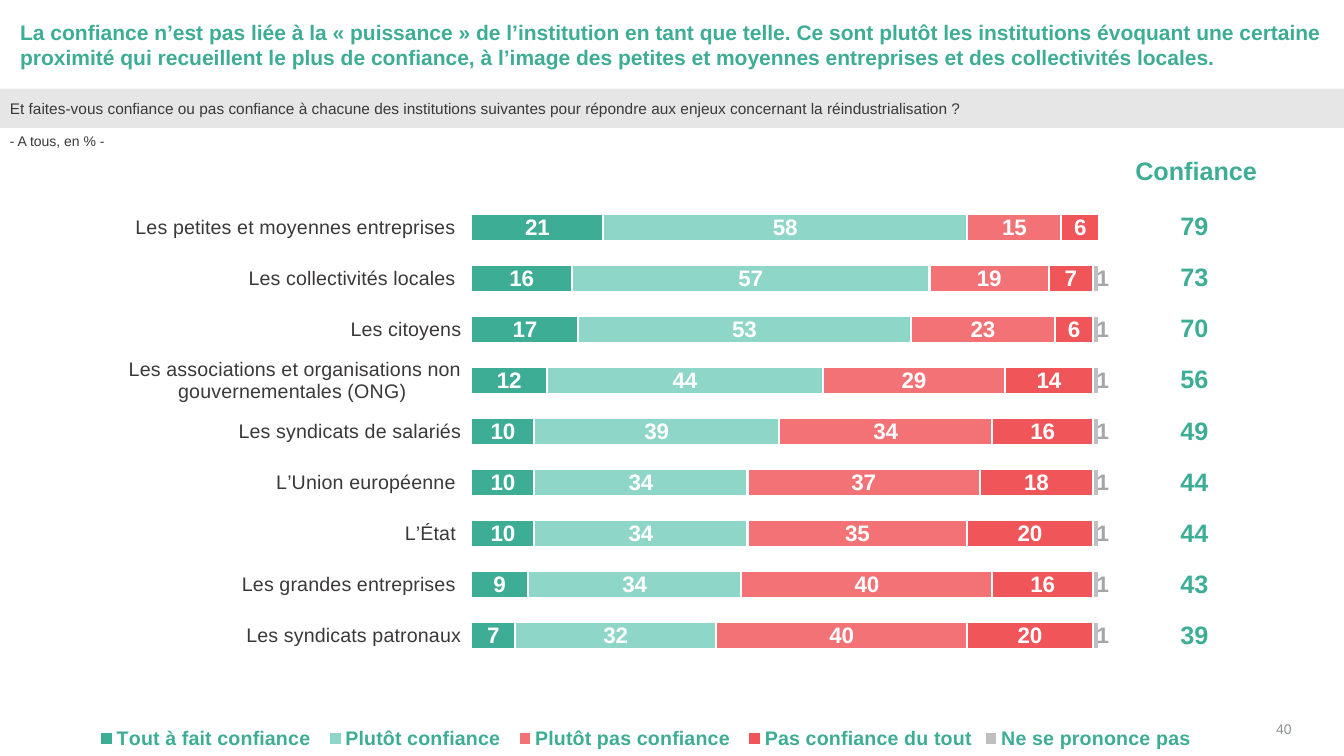
import dataclasses

import lxml.etree
import pptx
import pptx.chart.data
import pptx.dml.color
import pptx.enum.chart
import pptx.enum.shapes
import pptx.enum.text
import pptx.oxml
import pptx.oxml.ns
import pptx.util

PX = 9144
ALIGN = pptx.enum.text.PP_ALIGN
ANCHOR = pptx.enum.text.MSO_ANCHOR
qn = pptx.oxml.ns.qn


@dataclasses.dataclass(frozen=True)
class Theme:
    font: str = "Arial"
    green: str = "3EAD95"
    light_green: str = "8ED6C7"
    light_red: str = "F27275"
    red: str = "F05559"
    silver: str = "BFBFBF"
    grey_label: str = "A6A6A6"
    band: str = "E6E6E6"
    ink: str = "3B3838"
    page: str = "8C9491"
    white: str = "FFFFFF"
    small: int = 10
    question: int = 11
    axis: int = 14
    title: int = 15
    label: int = 16
    total: int = 18


T = Theme()

CATEGORIES = [
    "Les petites et moyennes entreprises ",
    "Les collectivités locales ",
    "Les citoyens",
    "Les associations et organisations non gouvernementales (ONG) ",
    "Les syndicats de salariés",
    "L’Union européenne ",
    "L’État ",
    "Les grandes entreprises ",
    "Les syndicats patronaux",
]
SERIES = [
    ("Tout à fait confiance ", T.green, [21, 16, 17, 12, 10, 10, 10, 9, 7]),
    ("Plutôt confiance ", T.light_green, [58, 57, 53, 44, 39, 34, 34, 34, 32]),
    ("Plutôt pas confiance ", T.light_red, [15, 19, 23, 29, 34, 37, 35, 40, 40]),
    ("Pas confiance du tout", T.red, [6, 7, 6, 14, 16, 18, 20, 16, 20]),
    ("Ne se prononce pas", T.silver, [None] + [1] * 8),
]
PLOT_LAYOUT = {"x": 0.365, "y": 0.061, "w": 0.486, "h": 0.781}


def px(*values):
    return [pptx.util.Emu(v * PX) for v in values]


def rgb(color):
    return pptx.dml.color.RGBColor.from_string(color)


def set_font(font, size, color, bold=False):
    font.name = T.font
    font.size = pptx.util.Pt(size)
    font.bold = bold
    font.color.rgb = rgb(color)


def write(tf, text, size=T.small, color=T.ink, bold=False, align=ALIGN.LEFT,
          anchor=ANCHOR.TOP, inset=(0, 0, 0, 0), wrap=True, indent=0):
    tf.word_wrap = wrap
    tf.vertical_anchor = anchor
    tf.margin_left, tf.margin_top, tf.margin_right, tf.margin_bottom = px(*inset)
    for i, line in enumerate(text.split("\n")):
        p = tf.paragraphs[0] if i == 0 else tf.add_paragraph()
        p.alignment = align
        if indent:
            p._p.get_or_add_pPr().set("marL", str(indent * PX))
        r = p.add_run()
        r.text = line
        set_font(r.font, size, color, bold)


def add_text(s, box, text, **fmt):
    write(s.shapes.add_textbox(*px(*box)).text_frame, text, **fmt)


def add_band(s, box, fill, text, opacity=100, **fmt):
    sp = s.shapes.add_shape(pptx.enum.shapes.MSO_SHAPE.RECTANGLE, *px(*box))
    sp.shadow.inherit = False
    sp.fill.solid()
    sp.fill.fore_color.rgb = rgb(fill)
    sp.line.fill.background()
    if opacity < 100:
        clr = sp._element.spPr.find(".//" + qn("a:srgbClr"))
        lxml.etree.SubElement(clr, qn("a:alpha"), val=str(opacity * 1000))
    write(sp.text_frame, text, anchor=ANCHOR.MIDDLE, **fmt)


def place_plot(chart):
    area = chart._chartSpace.chart.plotArea
    for old in area.findall(qn("c:layout")):
        area.remove(old)
    layout = lxml.etree.Element(qn("c:layout"))
    manual = lxml.etree.SubElement(layout, qn("c:manualLayout"))
    settings = {"layoutTarget": "inner", "xMode": "edge", "yMode": "edge", **PLOT_LAYOUT}
    for name, value in settings.items():
        lxml.etree.SubElement(manual, qn("c:" + name), val=str(value))
    area.insert(0, layout)


def style_series(ser, color):
    ser.format.fill.solid()
    ser.format.fill.fore_color.rgb = rgb(color)
    ser.format.line.color.rgb = rgb(T.white)
    ser.format.line.width = pptx.util.Pt(1.5)
    labels = ser.data_labels
    labels.show_value = True
    labels.number_format = "##0"
    labels.number_format_is_linked = False
    no_answer = color == T.silver
    set_font(labels.font, T.label, T.grey_label if no_answer else T.white, True)
    if no_answer:
        labels.position = pptx.enum.chart.XL_LABEL_POSITION.INSIDE_BASE


def add_trust_chart(s, box):
    data = pptx.chart.data.CategoryChartData(number_format="##0")
    data.categories = CATEGORIES
    for name, _, values in SERIES:
        data.add_series(name, values)
    kind = pptx.enum.chart.XL_CHART_TYPE.BAR_STACKED_100
    chart = s.shapes.add_chart(kind, *px(*box), data).chart
    chart.has_title = False
    set_font(chart.font, T.small, T.ink)
    place_plot(chart)

    plot = chart.plots[0]
    plot.gap_width = 85
    plot.overlap = 100
    plot.vary_by_categories = False
    for ser, (_, color, _) in zip(plot.series, SERIES):
        style_series(ser, color)

    axis = chart.category_axis
    axis.reverse_order = True
    axis.format.line.fill.background()
    set_font(axis.tick_labels.font, T.axis, T.ink)
    chart.value_axis.has_major_gridlines = False
    chart.value_axis.visible = False

    chart.has_legend = True
    chart.legend.position = pptx.enum.chart.XL_LEGEND_POSITION.BOTTOM
    chart.legend.include_in_layout = False
    set_font(chart.legend.font, T.axis, T.green, True)


def add_totals(s, box):
    totals = [a + b for a, b in zip(SERIES[0][2], SERIES[1][2])]
    table = s.shapes.add_table(len(totals), 1, *px(*box)).table
    table.first_row = False
    table.horz_banding = False
    for i, total in enumerate(totals):
        cell = table.cell(i, 0)
        cell.fill.background()
        cell.vertical_anchor = ANCHOR.MIDDLE
        cell.margin_left, cell.margin_top, cell.margin_right, cell.margin_bottom = px(1, 1, 1, 0)
        p = cell.text_frame.paragraphs[0]
        p.alignment = ALIGN.CENTER
        r = p.add_run()
        r.text = str(total)
        set_font(r.font, T.total, T.green, True)


def main():
    prs = pptx.Presentation()
    prs.slide_width, prs.slide_height = px(1333, 750)
    s = prs.slides.add_slide(prs.slide_layouts[6])

    add_text(s, (1222, 707, 59, 24), "40", color=T.page, align=ALIGN.RIGHT,
             anchor=ANCHOR.BOTTOM)
    add_band(s, (0, 88, 1333, 39), T.band,
             "Et faites-vous confiance ou pas confiance à chacune des institutions "
             "suivantes pour répondre aux enjeux concernant la réindustrialisation ?",
             size=T.question, align=ALIGN.JUSTIFY, inset=(10, 10, 20, 10))
    add_text(s, (0, 127, 1333, 39), "- A tous, en % -", inset=(10, 5, 10, 5))
    add_trust_chart(s, (0, 165, 1281, 583))
    add_totals(s, (1128, 199, 113, 457))
    add_text(s, (1126, 154, 122, 30), "Confiance", size=T.total, color=T.green,
             bold=True, wrap=False)
    add_band(s, (10, 9, 1315, 71), T.white,
             "La confiance n’est pas liée à la « puissance » de l’institution en tant "
             "que telle. Ce sont plutôt les institutions évoquant une certaine\n"
             "proximité qui recueillent le plus de confiance, à l’image des petites et "
             "moyennes entreprises et des collectivités locales.",
             opacity=30, size=T.title, color=T.green, bold=True, indent=10)
    prs.save("out.pptx")


if __name__ == "__main__":
    main()
